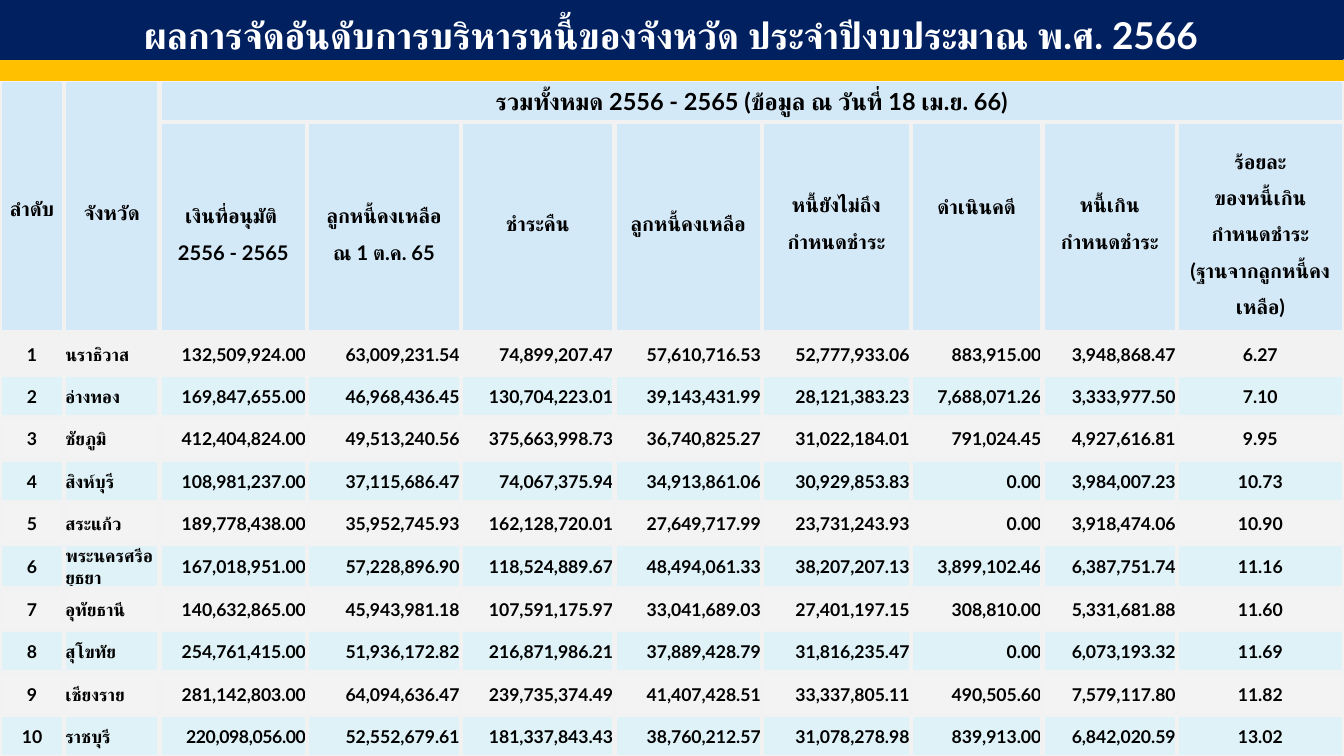
from lxml.etree import SubElement
from pptx import Presentation
from pptx.dml.color import RGBColor
from pptx.enum.shapes import MSO_SHAPE as Shape
from pptx.enum.text import MSO_ANCHOR as Anchor, PP_ALIGN as Align
from pptx.oxml.ns import qn
from pptx.util import Inches, Pt

NAVY = RGBColor(0x00, 0x20, 0x60)
GOLD = RGBColor(0xFF, 0xC0, 0x00)
WHITE = RGBColor(0xFF, 0xFF, 0xFF)
BLACK = RGBColor(0x00, 0x00, 0x00)
GREY = RGBColor(0xF2, 0xF2, 0xF2)
HEADER_BLUE = RGBColor(0xCA, 0xE4, 0xF6)
ROW_BLUE = RGBColor(0xD7, 0xEF, 0xF5)
FONT = "Lato"

COLUMNS = [0.53, 0.79, 1.22, 1.27, 1.27, 1.22, 1.23, 1.09, 1.11, 1.38]
ROWS = [0.35, 1.74] + [0.35] * 10
PERIOD = "รวมทั้งหมด 2556 - 2565 (ข้อมูล ณ วันที่ 18 เม.ย. 66)"
HEADINGS = [
    ("ลำดับ", 0.07), ("จังหวัด", 0),
    ("เงินที่อนุมัติ \n2556 - 2565", 0),
    ("ลูกหนี้คงเหลือ\nณ 1 ต.ค. 65", 0),
    ("ชำระคืน", 0.18), ("ลูกหนี้คงเหลือ", 0.18),
    ("หนี้ยังไม่ถึง\nกำหนดชำระ", 0.18),
    ("ดำเนินคดี", 0.46),
    ("หนี้เกิน\nกำหนดชำระ", 0.18),
    ("ร้อยละ\nของหนี้เกิน\nกำหนดชำระ\n(ฐานจากลูกหนี้คงเหลือ)", 0),
]
PROVINCES = [
    "นราธิวาส 132,509,924.00 63,009,231.54 74,899,207.47 57,610,716.53 52,777,933.06 883,915.00 3,948,868.47 6.27",
    "อ่างทอง 169,847,655.00 46,968,436.45 130,704,223.01 39,143,431.99 28,121,383.23 7,688,071.26 3,333,977.50 7.10",
    "ชัยภูมิ 412,404,824.00 49,513,240.56 375,663,998.73 36,740,825.27 31,022,184.01 791,024.45 4,927,616.81 9.95",
    "สิงห์บุรี 108,981,237.00 37,115,686.47 74,067,375.94 34,913,861.06 30,929,853.83 0.00 3,984,007.23 10.73",
    "สระแก้ว 189,778,438.00 35,952,745.93 162,128,720.01 27,649,717.99 23,731,243.93 0.00 3,918,474.06 10.90",
    "พระนครศรีอยุธยา 167,018,951.00 57,228,896.90 118,524,889.67 48,494,061.33 38,207,207.13 3,899,102.46 6,387,751.74 11.16",
    "อุทัยธานี 140,632,865.00 45,943,981.18 107,591,175.97 33,041,689.03 27,401,197.15 308,810.00 5,331,681.88 11.60",
    "สุโขทัย 254,761,415.00 51,936,172.82 216,871,986.21 37,889,428.79 31,816,235.47 0.00 6,073,193.32 11.69",
    "เชียงราย 281,142,803.00 64,094,636.47 239,735,374.49 41,407,428.51 33,337,805.11 490,505.60 7,579,117.80 11.82",
    "ราชบุรี 220,098,056.00 52,552,679.61 181,337,843.43 38,760,212.57 31,078,278.98 839,913.00 6,842,020.59 13.02",
]


def write(paragraph, text, size, color, align, spacing=1.0):
    paragraph.alignment = align
    paragraph.line_spacing = spacing
    for number, line in enumerate(text.split("\n")):
        if number:
            paragraph.add_line_break()
        run = paragraph.add_run()
        run.text = line
        run.font.size = Pt(size)
        run.font.bold = True
        run.font.color.rgb = color
        run.font.name = FONT
        SubElement(run.font._element, qn("a:cs"), typeface=FONT)


def fill_cell(cell, text, size, align, spacing=1.0, bottom=0.0):
    cell.vertical_anchor = Anchor.MIDDLE
    cell.margin_left = cell.margin_right = cell.margin_top = Inches(0.01)
    cell.margin_bottom = Inches(bottom)
    write(cell.text_frame.paragraphs[0], text, size, BLACK, align, spacing)


deck = Presentation()
deck.slide_width, deck.slide_height = Inches(11.11), Inches(6.25)
slide = deck.slides.add_slide(deck.slide_layouts[6])

ranking = slide.shapes.add_table(
    len(ROWS), len(COLUMNS), 0, Inches(0.66), Inches(sum(COLUMNS)), Inches(sum(ROWS))
).table
ranking.horz_banding = False
for column, width in zip(ranking.columns, COLUMNS):
    column.width = Inches(width)
for row, height in zip(ranking.rows, ROWS):
    row.height = Inches(height)

for r in range(len(ROWS)):
    if r < 2:
        shade, opacity = HEADER_BLUE, 80
    elif r % 2:
        shade, opacity = ROW_BLUE, 80
    else:
        shade, opacity = GREY, 100 if r == 2 else 90
    for c in range(len(COLUMNS)):
        cell = ranking.cell(r, c)
        properties = cell._tc.get_or_add_tcPr()
        for side in ("a:lnL", "a:lnR", "a:lnT", "a:lnB"):
            border = SubElement(properties, qn(side), w=str(Pt(3)))
            paint = SubElement(border, qn("a:solidFill"))
            SubElement(paint, qn("a:srgbClr"), val=str(GREY))
        cell.fill.solid()
        cell.fill.fore_color.rgb = shade
        if opacity < 100:
            tint = properties.find(qn("a:solidFill")).find(qn("a:srgbClr"))
            SubElement(tint, qn("a:alpha"), val=str(opacity * 1000))

for c in (0, 1):
    ranking.cell(0, c).merge(ranking.cell(1, c))
ranking.cell(0, 2).merge(ranking.cell(0, len(COLUMNS) - 1))
fill_cell(ranking.cell(0, 2), PERIOD, 14, Align.CENTER)

for c, (heading, bottom) in enumerate(HEADINGS):
    fill_cell(ranking.cell(0 if c < 2 else 1, c), heading, 12, Align.CENTER, 1.5, bottom)

alignments = [Align.CENTER, Align.LEFT] + [Align.RIGHT] * 7 + [Align.CENTER]
for rank, province in enumerate(PROVINCES, 1):
    for c, (value, align) in enumerate(zip([str(rank)] + province.split(), alignments)):
        fill_cell(ranking.cell(rank + 1, c), value, 10.5, align)
last_approved = ranking.cell(len(ROWS) - 1, 2).text_frame.paragraphs[0].runs[0]
last_approved.font._element.set("spc", "-20")

bands = []
for left, top, height, color in ((-0.01, -0.02, 0.51, NAVY), (0, 0.5, 0.16, GOLD)):
    band = slide.shapes.add_shape(
        Shape.RECTANGLE, Inches(left), Inches(top), deck.slide_width, Inches(height)
    )
    band.shadow.inherit = False
    band.fill.solid()
    band.fill.fore_color.rgb = color
    band.line.color.rgb = color
    band.line.width = Pt(1)
    bands.append(band)

title = bands[0].text_frame
title.word_wrap = True
title.vertical_anchor = Anchor.MIDDLE
write(
    title.paragraphs[0],
    "ผลการจัดอันดับการบริหารหนี้ของจังหวัด ประจำปีงบประมาณ พ.ศ. 2566",
    22, WHITE, Align.CENTER, 1.3,
)

deck.save("out.pptx")
